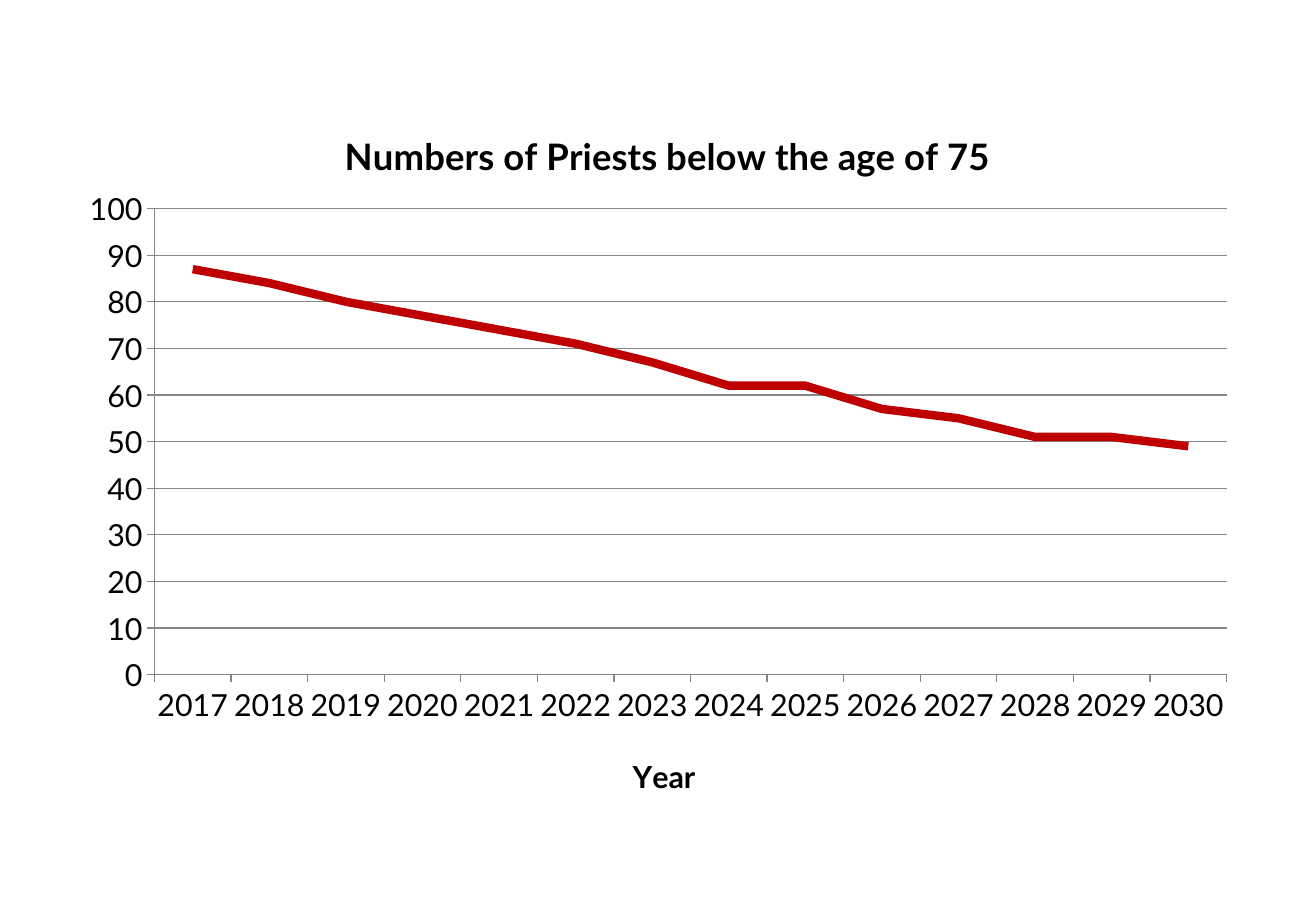
from lxml import etree
from pptx import Presentation
from pptx import util as u
from pptx.chart import data as chart_data
from pptx.dml import color
from pptx.enum import chart as ch
from pptx.oxml import ns

FONT = "Lato"
BLACK, GREY, RED = "000000", "868686", "BE0000"
YEARS = [str(year) for year in range(2017, 2031)]
PRIESTS = [87, 84, 80, 77, 74, 71, 67, 62, 62, 57, 55, 51, 51, 49]


def rgb(code):
    return color.RGBColor.from_string(code)


def style_font(font, size, bold=False):
    font.name = FONT
    font.size = u.Pt(size)
    font.bold = bold
    font.color.rgb = rgb(BLACK)


def style_line(line, code, width):
    line.color.rgb = rgb(code)
    line.width = u.Pt(width)


def place(element, **settings):
    """Set a manual layout; x, y, w and h are fractions of the chart area."""
    layout = element.find(ns.qn("c:layout"))
    if layout is None:
        layout = etree.Element(ns.qn("c:layout"))
        after_text = element.find(ns.qn("c:tx")) is not None
        element.insert(1 if after_text else 0, layout)
    manual = etree.SubElement(layout, ns.qn("c:manualLayout"))
    for key, value in settings.items():
        etree.SubElement(manual, ns.qn(f"c:{key}")).set("val", str(value))


def write_title(title, wording, size, x, y):
    run = title.text_frame.paragraphs[0].add_run()
    run.text = wording
    style_font(run.font, size, bold=True)
    place(title._element, xMode="edge", yMode="edge", x=x, y=y)


def style_axis(axis):
    axis.major_tick_mark = ch.XL_TICK_MARK.OUTSIDE
    axis.minor_tick_mark = ch.XL_TICK_MARK.NONE
    style_font(axis.tick_labels.font, 18)
    style_line(axis.format.line, GREY, 0.75)


def add_priests_chart(slide):
    numbers = chart_data.CategoryChartData()
    numbers.categories = YEARS
    numbers.add_series("Series 1", PRIESTS)
    chart = slide.shapes.add_chart(
        ch.XL_CHART_TYPE.LINE, u.Inches(0.54), u.Inches(0.74),
        u.Inches(9.75), u.Inches(5.96), numbers).chart
    style_font(chart.font, 18)
    chart.has_legend = False
    write_title(chart.chart_title, "Numbers of Priests below the age of 75",
                21.6, 0.23, 0.045)

    year_axis, count_axis = chart.category_axis, chart.value_axis
    for axis in (year_axis, count_axis):
        style_axis(axis)
    write_title(year_axis.axis_title, "Year", 18, 0.474, 0.91)
    year_axis.has_major_gridlines = False
    count_axis.minimum_scale = 0
    count_axis.maximum_scale = 100
    count_axis.major_unit = 10
    style_line(count_axis.major_gridlines.format.line, GREY, 0.75)

    plot = chart.plots[0]
    plot.vary_by_categories = False
    trend = plot.series[0]
    trend.smooth = False
    trend.marker.style = ch.XL_MARKER_STYLE.NONE
    style_line(trend.format.line, RED, 5)
    place(chart._chartSpace.chart.plotArea, layoutTarget="inner",
          xMode="edge", yMode="edge", x=0.075, y=0.164, w=0.905, h=0.644)


def main():
    deck = Presentation()
    deck.slide_width = u.Inches(10.83)
    deck.slide_height = u.Inches(7.5)
    slide = deck.slides.add_slide(deck.slide_layouts[6])
    add_priests_chart(slide)
    deck.save("out.pptx")


if __name__ == "__main__":
    main()
